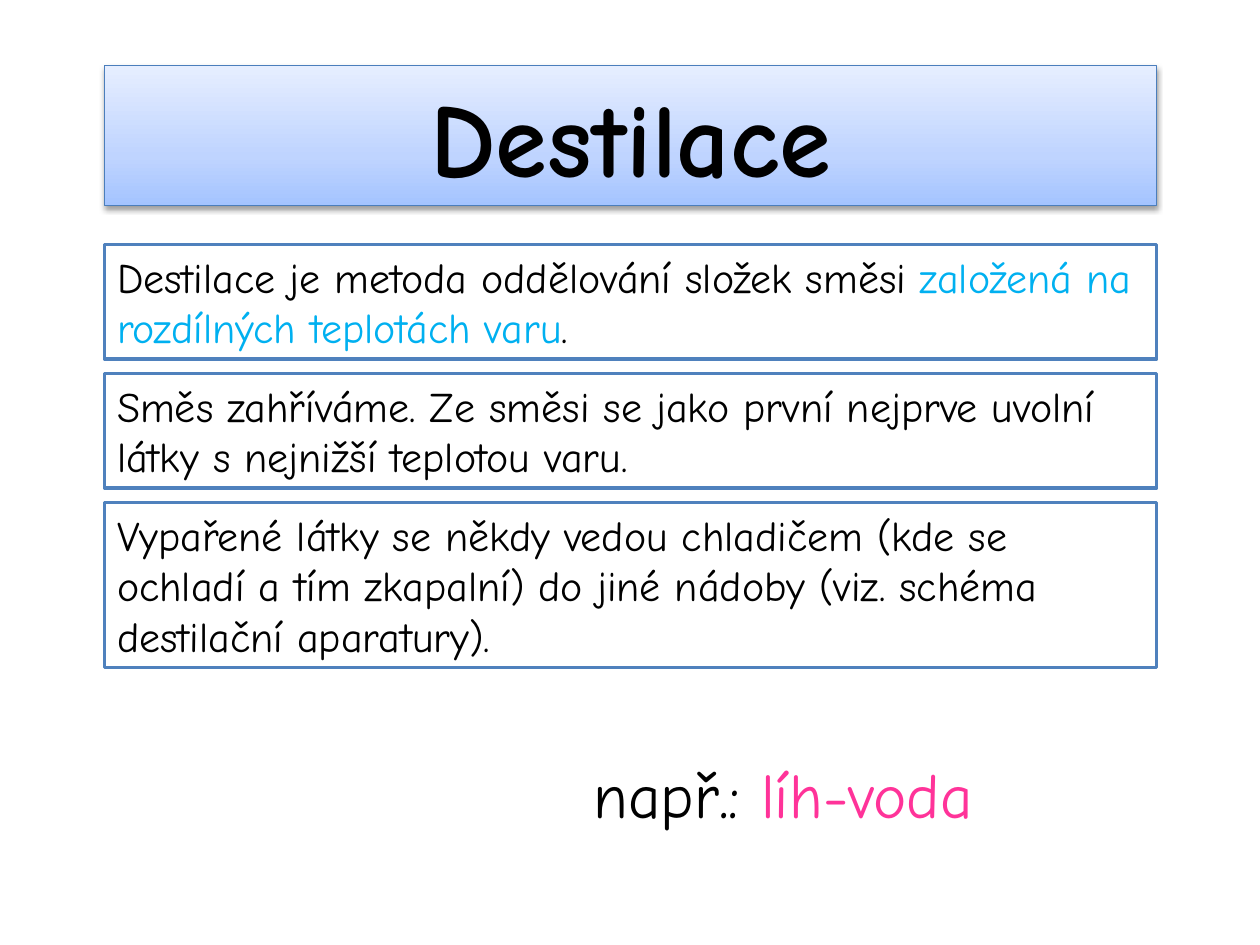
from copy import deepcopy
from dataclasses import dataclass
from typing import Optional

from lxml import etree
from pptx import Presentation
from pptx import util as u
from pptx.dml.color import RGBColor
from pptx.enum import shapes, text
from pptx.oxml import ns

COLOURS = {
    "black": "000000",
    "white": "FFFFFF",
    "frame": "4F81BD",
    "title_frame": "4B7EBC",
    "blue": "00B0F0",
    "pink": "FF3399",
}
TITLE_STOPS = [(0, "A4C4FF"), (0.35, "BFD4FF"), (1, "E6EEFF")]
FONT = "Comic Neue"
LEFT, WIDTH = 2.11, 21.21
FIRST_TOP, GAP = 4.93, 0.29


@dataclass
class Span:
    words: str
    colour: str = "black"


@dataclass
class Block:
    left: float
    top: float
    width: float
    height: float
    spans: list[Span]
    size: int = 24
    bold: bool = False
    align: text.PP_ALIGN = text.PP_ALIGN.LEFT
    frame: Optional[str] = "frame"
    frame_width: float = 2


def colour_of(name: str) -> RGBColor:
    return RGBColor.from_string(COLOURS[name])


def set_all(target, values: dict) -> None:
    for name, value in values.items():
        setattr(target, name, value)


def write_text(box, block: Block) -> None:
    set_all(box.text_frame, {
        "word_wrap": True,
        "auto_size": text.MSO_AUTO_SIZE.SHAPE_TO_FIT_TEXT,
    })
    para = box.text_frame.paragraphs[0]
    para.alignment = block.align
    for span in block.spans:
        run = para.add_run()
        run.text = span.words
        set_all(run.font, {"name": FONT, "size": u.Pt(block.size), "bold": block.bold})
        run.font.color.rgb = colour_of(span.colour)


def draw_block(page, block: Block):
    area = [u.Cm(v) for v in (block.left, block.top, block.width, block.height)]
    if block.frame is None:
        box = page.shapes.add_textbox(*area)
    else:
        box = page.shapes.add_shape(shapes.MSO_SHAPE.RECTANGLE, *area)
        box.shadow.inherit = False
        box.fill.solid()
        box.fill.fore_color.rgb = colour_of("white")
        box.line.color.rgb = colour_of(block.frame)
        box.line.width = u.Pt(block.frame_width)
    write_text(box, block)
    return box


def add_gradient(box) -> None:
    box.fill.gradient()
    box.fill.gradient_angle = 90
    stop_list = box.element.spPr.find(f".//{ns.qn('a:gsLst')}")
    stop_list.append(deepcopy(stop_list[-1]))
    for stop, (position, colour) in zip(box.fill.gradient_stops, TITLE_STOPS):
        stop.position = position
        stop.color.rgb = RGBColor.from_string(colour)


def add_shadow(box) -> None:
    effects = box.element.spPr.find(ns.qn("a:effectLst"))
    shadow = etree.SubElement(
        effects, ns.qn("a:outerShdw"),
        blurRad=str(u.Pt(3.1)), dist=str(u.Pt(1.6)), dir="5400000", rotWithShape="0",
    )
    colour = etree.SubElement(shadow, ns.qn("a:srgbClr"), val=COLOURS["black"])
    etree.SubElement(colour, ns.qn("a:alpha"), val="38000")


def main() -> None:
    deck = Presentation()
    set_all(deck, {"slide_width": u.Cm(25.4), "slide_height": u.Cm(19.05)})
    page = deck.slides.add_slide(deck.slide_layouts[6])

    title = draw_block(page, Block(
        LEFT, 1.32, WIDTH, 2.82, [Span("Destilace")], size=60, bold=True,
        align=text.PP_ALIGN.CENTER, frame="title_frame", frame_width=0.75,
    ))
    add_gradient(title)
    add_shadow(title)

    statements = [
        (2.31, [
            Span("Destilace je metoda oddělování složek směsi "),
            Span("založená na rozdílných teplotách varu", "blue"),
            Span("."),
        ]),
        (2.31, [Span("Směs zahříváme. Ze směsi se jako první nejprve uvolní "
                     "látky s nejnižší teplotou varu.")]),
        (3.33, [Span("Vypařené látky se někdy vedou chladičem (kde se ochladí a tím "
                     "zkapalní) do jiné nádoby (viz. schéma destilační aparatury).")]),
    ]
    top = FIRST_TOP
    for height, spans in statements:
        draw_block(page, Block(LEFT, top, WIDTH, height, spans))
        top += height + GAP

    draw_block(page, Block(
        11.71, 15.11, 10.39, 1.8, [Span("např.: "), Span("líh-voda", "pink")],
        size=36, frame=None,
    ))
    deck.save("out.pptx")


if __name__ == "__main__":
    main()
